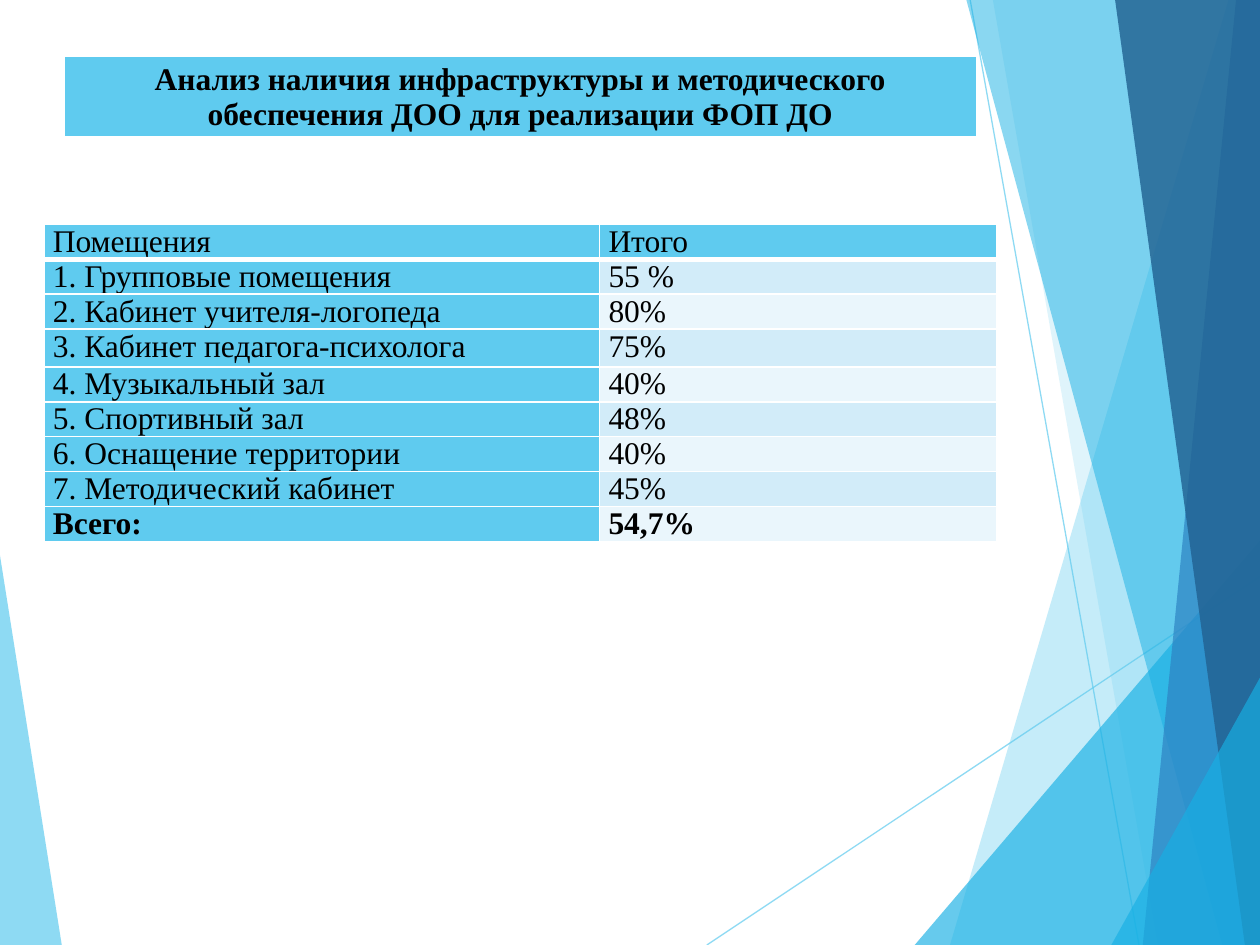
import pptx
import pptx.dml.color
import pptx.enum.shapes
import pptx.enum.text
import pptx.oxml
import pptx.oxml.ns
import pptx.util

RGBColor = pptx.dml.color.RGBColor
Align = pptx.enum.text.PP_ALIGN

WHITE = RGBColor(0xFF, 0xFF, 0xFF)
BLACK = RGBColor(0x00, 0x00, 0x00)
SKY = RGBColor(0x5F, 0xCB, 0xEF)
AZURE = RGBColor(0x17, 0xB0, 0xE4)
BLUE = RGBColor(0x2E, 0x83, 0xC3)
NAVY = RGBColor(0x22, 0x62, 0x92)
BAND_DARK = RGBColor(0xD2, 0xEC, 0xF9)
BAND_LIGHT = RGBColor(0xEA, 0xF6, 0xFC)

FONT = "Times New Roman"
SLIDE_WIDTH = pptx.util.Inches(10)
SLIDE_HEIGHT = pptx.util.Inches(7.5)

LEFT_FACET = ([(0, 58.8), (4.9, 100), (0, 100)], SKY, 70)
RAYS = [((56.1, 100), (100, 61)), ((77, 0), (90.4, 100))]
RIGHT_FACETS = [
    ([(97.5, 0), (75.4, 100), (100, 100), (100, 0)], SKY, 36),
    ([(78.8, 0), (91.9, 100), (100, 100), (100, 0)], SKY, 20),
    ([(72.6, 100), (100, 57.2), (100, 100)], AZURE, 66),
    ([(76.7, 0), (97, 100), (100, 100), (100, 0)], AZURE, 50),
    ([(98.1, 0), (90.7, 100), (100, 100), (100, 0)], BLUE, 70),
    ([(88.5, 0), (98.8, 100), (100, 100), (100, 0)], NAVY, 82),
    ([(88.2, 100), (100, 71.7), (100, 100)], AZURE, 66),
]

TITLE = "Анализ наличия инфраструктуры и методического обеспечения ДОО для реализации ФОП ДО"
ROOMS = [
    ("Помещения", "Итого"),
    ("1. Групповые помещения", "55 %"),
    ("2. Кабинет учителя-логопеда", "80%"),
    ("3. Кабинет педагога-психолога", "75%"),
    ("4. Музыкальный зал", "40%"),
    ("5. Спортивный зал", "48%"),
    ("6. Оснащение территории", "40%"),
    ("7. Методический кабинет", "45%"),
    ("Всего:", "54,7%"),
]


def across(percent):
    return round(SLIDE_WIDTH * percent / 100)


def down(percent):
    return round(SLIDE_HEIGHT * percent / 100)


def set_opacity(format_with_fill, percent):
    color = format_with_fill._xPr.find(".//" + pptx.oxml.ns.qn("a:srgbClr"))
    alpha = pptx.oxml.parse_xml(
        f'<a:alpha {pptx.oxml.ns.nsdecls("a")} val="{percent * 1000}"/>'
    )
    color.append(alpha)


def add_facet(slide, corners, color, opacity):
    points = [(across(x), down(y)) for x, y in corners]
    builder = slide.shapes.build_freeform(*points[0])
    builder.add_line_segments(points[1:], close=True)
    shape = builder.convert_to_shape()
    shape.shadow.inherit = False
    shape.line.fill.background()
    shape.fill.solid()
    shape.fill.fore_color.rgb = color
    set_opacity(shape.fill, opacity)


def add_ray(slide, start, end):
    connector = slide.shapes.add_connector(
        pptx.enum.shapes.MSO_CONNECTOR.STRAIGHT,
        across(start[0]), down(start[1]), across(end[0]), down(end[1]),
    )
    connector.line.width = pptx.util.Pt(0.75)
    connector.line.fill.solid()
    connector.line.fill.fore_color.rgb = SKY
    set_opacity(connector.line.fill, 70)
    properties = connector._element.spPr
    properties.append(
        pptx.oxml.parse_xml(f'<a:effectLst {pptx.oxml.ns.nsdecls("a")}/>')
    )


def write_text(frame, text, align=Align.JUSTIFY, bold=False, space_after=0):
    paragraph = frame.paragraphs[0]
    paragraph.alignment = align
    paragraph.space_after = pptx.util.Pt(space_after)
    run = paragraph.add_run()
    run.text = text
    run.font.name = FONT
    run.font.size = pptx.util.Pt(18)
    run.font.bold = bold
    run.font.color.rgb = BLACK


def style_cell(cell, color, bottom_width=1):
    cell.fill.solid()
    cell.fill.fore_color.rgb = color
    widths = {"lnL": 1, "lnR": 1, "lnT": 1, "lnB": bottom_width}
    for position, (side, width) in enumerate(widths.items()):
        border = pptx.oxml.parse_xml(
            f'<a:{side} {pptx.oxml.ns.nsdecls("a")} w="{pptx.util.Pt(width)}">'
            f'<a:solidFill><a:srgbClr val="{WHITE}"/></a:solidFill></a:{side}>'
        )
        cell._tc.get_or_add_tcPr().insert(position, border)


def add_grid(slide, left, top, column_widths, row_heights):
    table = slide.shapes.add_table(
        len(row_heights), len(column_widths), across(left), down(top),
        across(sum(column_widths)), down(sum(row_heights)),
    ).table
    for column, width in zip(table.columns, column_widths):
        column.width = across(width)
    for row, height in zip(table.rows, row_heights):
        row.height = down(height)
    return table


def add_title(slide):
    cell = add_grid(slide, 5.1, 5.9, [72.4], [7.33]).cell(0, 0)
    style_cell(cell, SKY, bottom_width=3)
    write_text(cell.text_frame, TITLE, align=Align.CENTER, bold=True)


def add_rooms_table(slide):
    heights = [3.6] * len(ROOMS)
    heights[3] = 4
    table = add_grid(slide, 3.5, 23.73, [44.1, 31.5], heights)
    last = len(ROOMS) - 1
    for row, texts in enumerate(ROOMS):
        band = BAND_DARK if row % 2 else BAND_LIGHT
        colors = (SKY, band if row else SKY)
        for column, (text, color) in enumerate(zip(texts, colors)):
            cell = table.cell(row, column)
            cell.margin_left = cell.margin_right = pptx.util.Inches(0.07)
            cell.margin_top = cell.margin_bottom = 0
            style_cell(cell, color, bottom_width=1 if row else 3)
            write_text(cell.text_frame, text, bold=row == last, space_after=8)


def main():
    presentation = pptx.Presentation()
    presentation.slide_width = SLIDE_WIDTH
    presentation.slide_height = SLIDE_HEIGHT
    slide = presentation.slides.add_slide(presentation.slide_layouts[6])
    add_facet(slide, *LEFT_FACET)
    for start, end in RAYS:
        add_ray(slide, start, end)
    for corners, color, opacity in RIGHT_FACETS:
        add_facet(slide, corners, color, opacity)
    add_title(slide)
    add_rooms_table(slide)
    presentation.save("out.pptx")


if __name__ == "__main__":
    main()
